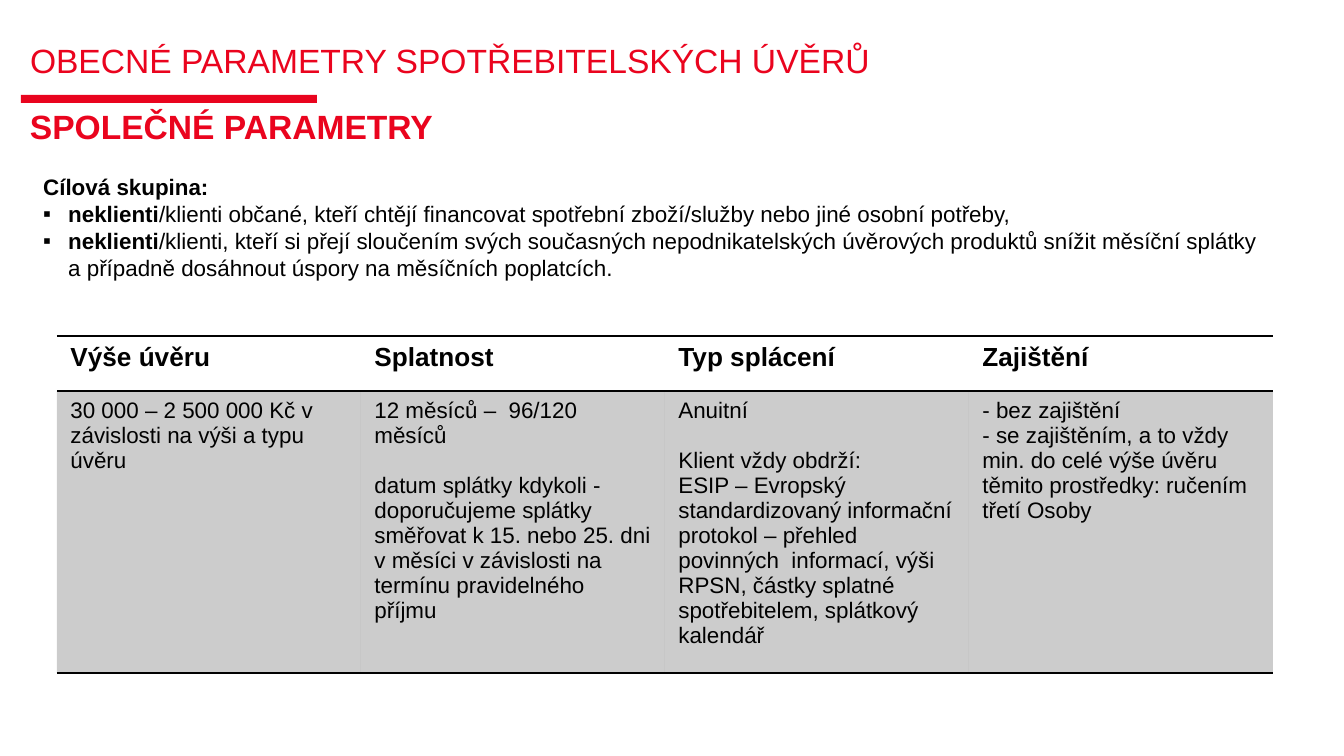
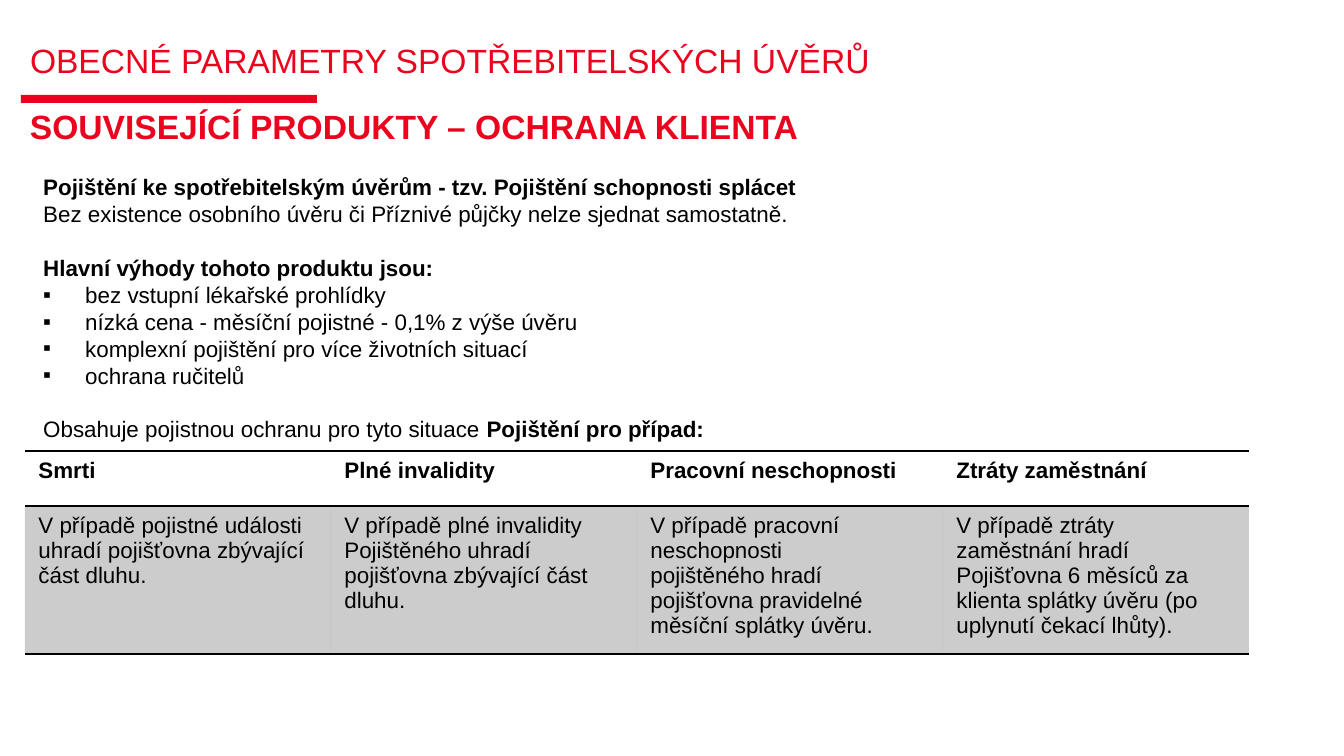
from dataclasses import dataclass

from lxml import etree
from pptx import Presentation
from pptx.dml import color
from pptx.enum import shapes, text
from pptx.oxml import ns
from pptx import util as u

PX = 914400 / 134.4


@dataclass(frozen=True)
class Theme:
    """Colours, type sizes and spacing shared by the slides."""
    font: str = "Arial"
    bar: str = "E9041E"
    heading: str = "EA041E"
    ink: str = "010101"
    shade_alpha: int = 20
    heading_size: int = 18
    body_size: int = 12
    heading_spacing: float = 0.75
    body_gap: float = 14.4
    cell_gap: float = 13.4
    border: int = 1


@dataclass(frozen=True)
class Line:
    """One paragraph: its bold lead, its plain text or bold tail, and its layout."""
    lead: str = ""
    plain: str = ""
    tail: str = ""
    indent: int = 0
    gap: float = 0


THEME = Theme()
TITLE = "OBECNÉ PARAMETRY SPOTŘEBITELSKÝCH ÚVĚRŮ"
NO_STYLE = "{2D5ABB26-0587-4C30-8999-92F81FD0307C}"


def px(*lengths):
    """Turn px lengths into a list of EMU."""
    return [u.Emu(round(length * PX)) for length in lengths]


def rgb(value):
    """Return the colour of a hex string."""
    return color.RGBColor.from_string(value)


def add_element(parent, tag, **attributes):
    """Append a DrawingML element to its parent."""
    return etree.SubElement(parent, ns.qn(tag), attributes)


def style_font(font, size, ink, bold=None):
    """Set the typeface, size, colour and weight of a font."""
    font.name = THEME.font
    font.size = u.Pt(size)
    font.color.rgb = rgb(ink)
    font.bold = bold


def add_bullet(paragraph, indent):
    """Give a paragraph a square bullet with a hanging indent."""
    properties = paragraph._p.get_or_add_pPr()
    width = px(indent)[0]
    properties.set("marL", str(width))
    properties.set("indent", str(-width))
    add_element(properties, "a:buFont", typeface=THEME.font)
    add_element(properties, "a:buChar", char="▪")


def format_heading(shape, wording, box, bold):
    """Place a red heading that sits on the bottom of its box."""
    shape.left, shape.top, shape.width, shape.height = px(*box)
    frame = shape.text_frame
    frame.margin_left = frame.margin_top = frame.margin_right = frame.margin_bottom = 0
    frame.vertical_anchor = text.MSO_ANCHOR.BOTTOM
    frame.word_wrap = True
    frame.auto_size = text.MSO_AUTO_SIZE.SHAPE_TO_FIT_TEXT
    paragraph = frame.paragraphs[0]
    paragraph.text = wording
    paragraph.alignment = text.PP_ALIGN.LEFT
    paragraph.line_spacing = THEME.heading_spacing
    style_font(paragraph.font, THEME.heading_size, THEME.heading, bold)


def add_bar(slide):
    """Draw the red bar under the title."""
    bar = slide.shapes.add_shape(shapes.MSO_SHAPE.RECTANGLE, *px(21, 95, 296, 8))
    bar.shadow.inherit = False
    bar.fill.solid()
    bar.fill.fore_color.rgb = rgb(THEME.bar)
    bar.line.fill.background()


def add_headed_slide(presentation, subtitle, subtitle_width):
    """Add a slide with the shared title, bar and a bold subtitle."""
    slide = presentation.slides.add_slide(presentation.slide_layouts[5])
    format_heading(slide.shapes.title, TITLE, (30, 18, 859, 62), False)
    add_bar(slide)
    box = (30, 115, subtitle_width, 31)
    format_heading(slide.shapes.add_textbox(*px(*box)), subtitle, box, True)
    return slide


def add_body(slide, lines, height):
    """Add the body text box."""
    frame = slide.shapes.add_textbox(*px(30, 167, 1243, height)).text_frame
    frame.word_wrap = True
    frame.auto_size = text.MSO_AUTO_SIZE.SHAPE_TO_FIT_TEXT
    for index, line in enumerate(lines):
        paragraph = frame.add_paragraph() if index else frame.paragraphs[0]
        if line.gap:
            paragraph.space_before = u.Pt(line.gap)
        if line.indent:
            add_bullet(paragraph, line.indent)
        style_font(paragraph.font, THEME.body_size, THEME.ink)
        for wording, bold in ((line.lead, True), (line.plain, False), (line.tail, True)):
            if wording:
                run = paragraph.add_run()
                run.text = wording
                run.font.bold = bold


def add_borders(cell):
    """Draw thin lines above and below a cell."""
    properties = cell._tc.get_or_add_tcPr()
    for tag in ("a:lnT", "a:lnB"):
        line = add_element(properties, tag, w=str(u.Pt(THEME.border)))
        add_element(add_element(line, "a:solidFill"), "a:srgbClr", val=THEME.ink)


def shade(cell):
    """Fill a cell with translucent ink."""
    cell.fill.solid()
    cell.fill.fore_color.rgb = rgb(THEME.ink)
    ink = cell._tc.tcPr.find(ns.qn("a:solidFill")).find(ns.qn("a:srgbClr"))
    add_element(ink, "a:alpha", val=str(THEME.shade_alpha * 1000))


def fill_cell(cell, lines, size, bold):
    """Write lines in a cell; an empty line becomes space before the next."""
    frame = cell.text_frame
    gap = 0
    paragraph = None
    for line in lines:
        if not line:
            gap = THEME.cell_gap
            continue
        paragraph = frame.add_paragraph() if paragraph else frame.paragraphs[0]
        paragraph.text = line
        if gap:
            paragraph.space_before = u.Pt(gap)
        style_font(paragraph.font, size, THEME.ink, bold)
        gap = 0


def add_parameter_table(slide, columns, place, column_width, heights, header_size):
    """Add a table with a bold header row over one shaded row."""
    box = (*place, column_width * len(columns), sum(heights))
    table = slide.shapes.add_table(2, len(columns), *px(*box)).table
    table.first_row = table.horz_banding = False
    table._tbl.tblPr.find(ns.qn("a:tableStyleId")).text = NO_STYLE
    for row, height in zip(table.rows, px(*heights)):
        row.height = height
    for index, (header, lines) in enumerate(columns.items()):
        table.columns[index].width = px(column_width)[0]
        top, bottom = table.cell(0, index), table.cell(1, index)
        add_borders(top)
        add_borders(bottom)
        top.fill.background()
        shade(bottom)
        fill_cell(top, [header], header_size, True)
        fill_cell(bottom, lines, THEME.body_size, False)


def build_common_parameters(presentation):
    """Build the slide on the target group and loan terms."""
    slide = add_headed_slide(presentation, "SPOLEČNÉ PARAMETRY", 559)
    add_body(slide, [
        Line("Cílová skupina:"),
        Line("neklienti", "/klienti občané, kteří chtějí financovat spotřební zboží/služby "
             "nebo jiné osobní potřeby,", indent=25),
        Line("neklienti", "/klienti, kteří si přejí sloučením svých současných "
             "nepodnikatelských úvěrových produktů snížit měsíční splátky a případně "
             "dosáhnout úspory na měsíčních poplatcích.", indent=25),
    ], 122)
    add_parameter_table(slide, {
        "Výše úvěru": ["30 000 – 2 500 000 Kč v závislosti na výši a typu", "úvěru"],
        "Splatnost": [
            "12 měsíců –  96/120 měsíců", "",
            "datum splátky kdykoli - doporučujeme splátky směřovat k 15. nebo 25. dni "
            "v měsíci v závislosti na termínu pravidelného příjmu"],
        "Typ splácení": [
            "Anuitní", "", "Klient vždy obdrží:", "ESIP – Evropský",
            "standardizovaný informační",
            "protokol – přehled povinných  informací, výši RPSN, částky splatné "
            "spotřebitelem, splátkový kalendář"],
        "Zajištění": [
            "- bez zajištění",
            "- se zajištěním, a to vždy min. do celé výše úvěru těmito prostředky: "
            "ručením třetí Osoby"],
    }, (57, 336), 304, (55, 282), 14)


def build_client_protection(presentation):
    """Build the slide on payment protection insurance."""
    slide = add_headed_slide(presentation, "SOUVISEJÍCÍ PRODUKTY – OCHRANA KLIENTA", 848)
    benefits = ["bez vstupní lékařské prohlídky",
                "nízká cena - měsíční pojistné - 0,1% z výše úvěru",
                "komplexní pojištění pro více životních situací",
                "ochrana ručitelů"]
    add_body(slide, [
        Line("Pojištění ke spotřebitelským úvěrům - tzv. Pojištění schopnosti splácet"),
        Line(plain="Bez existence osobního úvěru či Příznivé půjčky nelze sjednat samostatně."),
        Line("Hlavní výhody tohoto produktu jsou:", gap=THEME.body_gap),
        *[Line(plain=benefit, indent=42) for benefit in benefits],
        Line(plain="Obsahuje pojistnou ochranu pro tyto situace ",
             tail="Pojištění pro případ:", gap=THEME.body_gap),
    ], 285)
    add_parameter_table(slide, {
        "Smrti": ["V případě pojistné události uhradí pojišťovna zbývající část dluhu."],
        "Plné invalidity": [
            "V případě plné invalidity",
            "Pojištěného uhradí pojišťovna zbývající část dluhu."],
        "Pracovní neschopnosti": [
            "V případě pracovní neschopnosti",
            "pojištěného hradí pojišťovna pravidelné měsíční splátky úvěru."],
        "Ztráty zaměstnání": [
            "V případě ztráty zaměstnání hradí",
            "Pojišťovna 6 měsíců za klienta splátky úvěru (po uplynutí čekací lhůty)."],
    }, (25, 451), 306, (55, 148), THEME.body_size)


def main():
    """Build and save the presentation."""
    presentation = Presentation()
    presentation.slide_width, presentation.slide_height = px(1344, 756)
    build_common_parameters(presentation)
    build_client_protection(presentation)
    presentation.save("out.pptx")


if __name__ == "__main__":
    main()
